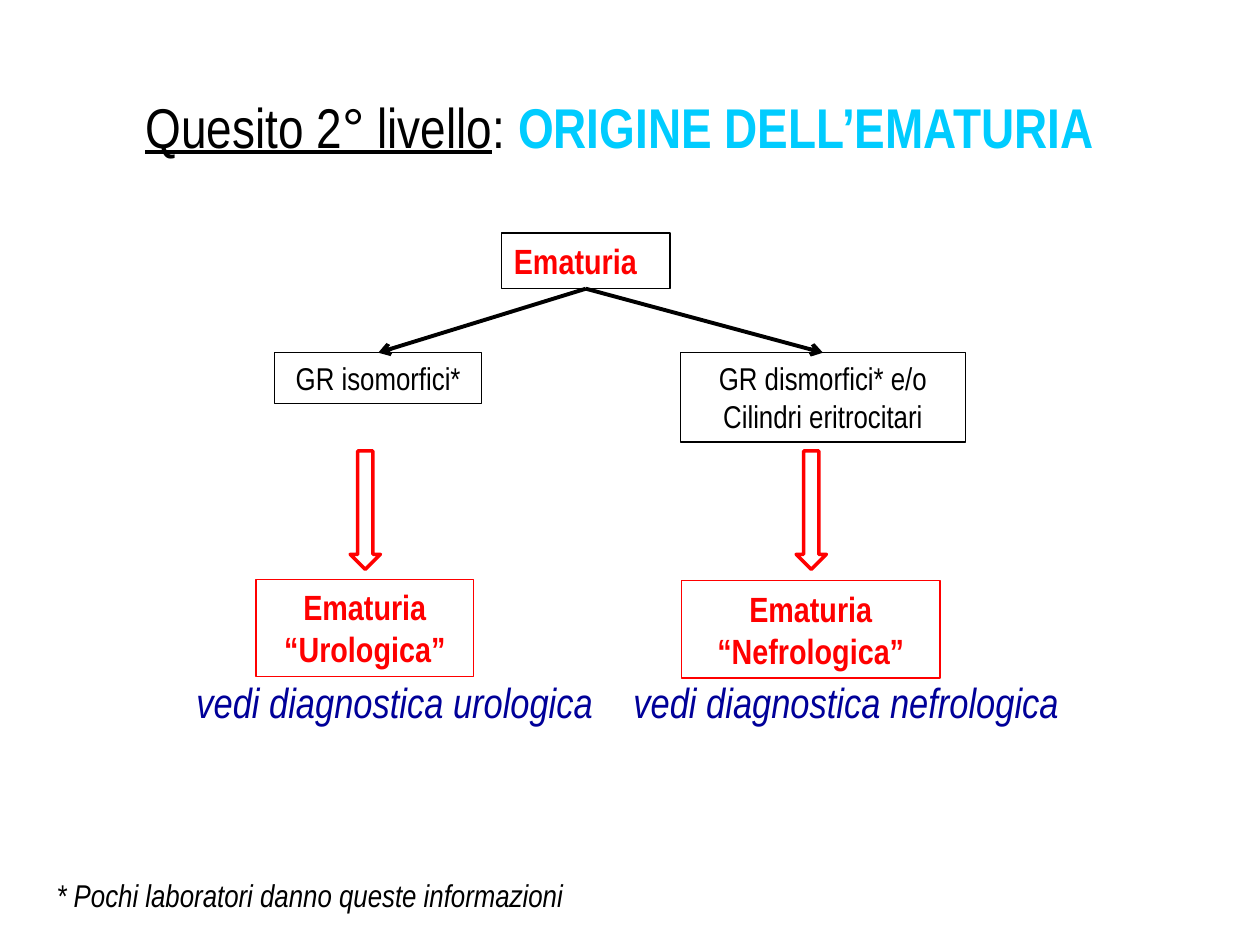
from dataclasses import dataclass
from lxml.etree import SubElement
from pptx import Presentation
from pptx.dml.color import RGBColor
from pptx.enum.shapes import MSO_CONNECTOR, MSO_SHAPE
from pptx.enum.text import MSO_ANCHOR, MSO_AUTO_SIZE, PP_ALIGN
from pptx.oxml.ns import qn
from pptx.util import Cm, Pt


@dataclass(frozen=True)
class Theme:
    font: str = "Arial Narrow"
    black: str = "000000"
    white: str = "FFFFFF"
    red: str = "FF0000"
    cyan: str = "00CCFF"
    navy: str = "000099"
    head: int = 32
    link: int = 24
    node: int = 20
    body: int = 18
    thin: float = 0.75
    thick: float = 2.25
    block: float = 2


class Board:
    def __init__(self, slide, theme):
        self.slide = slide
        self.theme = theme

    def label(self, shape, lines, size, align, wrap=True):
        frame = shape.text_frame
        frame.word_wrap = wrap
        frame.auto_size = MSO_AUTO_SIZE.SHAPE_TO_FIT_TEXT
        frame.vertical_anchor = MSO_ANCHOR.TOP
        for i, runs in enumerate(lines):
            para = frame.add_paragraph() if i else frame.paragraphs[0]
            para.alignment = align
            for text, color, style in runs:
                run = para.add_run()
                run.text = text
                font = run.font
                font.name = self.theme.font
                font.size = Pt(size)
                font.color.rgb = RGBColor.from_string(color)
                font.bold = "b" in style
                font.italic = "i" in style
                font.underline = "u" in style

    def title(self, x, y, w, h, runs):
        shape = self.slide.shapes.title
        shape.left, shape.top, shape.width, shape.height = map(Cm, (x, y, w, h))
        self.label(shape, [runs], self.theme.head, PP_ALIGN.CENTER)

    def shape(self, kind, x, y, w, h, line, width):
        shape = self.slide.shapes.add_shape(kind, *map(Cm, (x, y, w, h)))
        shape.shadow.inherit = False
        shape.fill.background()
        shape.line.color.rgb = RGBColor.from_string(line)
        shape.line.width = Pt(width)
        return shape

    def box(self, x, y, w, h, texts, size, color, line, style="", align=PP_ALIGN.CENTER):
        shape = self.shape(MSO_SHAPE.RECTANGLE, x, y, w, h, line, self.theme.thin)
        self.label(shape, [[(text, color, style)] for text in texts], size, align)
        return shape

    def arrow(self, x, y, w, h):
        shape = self.shape(MSO_SHAPE.DOWN_ARROW, x, y, w, h, self.theme.red, self.theme.block)
        shape.fill.solid()
        shape.fill.fore_color.rgb = RGBColor.from_string(self.theme.white)

    def join(self, top, low):
        link = self.slide.shapes.add_connector(MSO_CONNECTOR.STRAIGHT, 0, 0, 0, 0)
        link.begin_connect(top, 2)
        link.end_connect(low, 0)
        link.line.color.rgb = RGBColor.from_string(self.theme.black)
        link.line.width = Pt(self.theme.thick)
        props = link._element.spPr
        SubElement(props.find(qn("a:ln")), qn("a:tailEnd"), type="arrow")
        SubElement(props, qn("a:effectLst"))

    def note(self, x, y, w, h, text, size, color):
        shape = self.slide.shapes.add_textbox(*map(Cm, (x, y, w, h)))
        self.label(shape, [[(text, color, "i")]], size, PP_ALIGN.LEFT, False)


def main():
    deck = Presentation()
    deck.slide_width, deck.slide_height = Cm(25.4), Cm(19.05)
    theme = Theme()
    board = Board(deck.slides.add_slide(deck.slide_layouts[5]), theme)

    board.title(0.89, 1.73, 23.44, 1.63, [
        ("Quesito 2° livello", theme.black, "u"),
        (": ", theme.black, ""),
        ("ORIGINE DELL’EMATURIA ", theme.cyan, "b"),
    ])

    root = board.box(10.11, 4.7, 3.4, 1.12, ["Ematuria"], theme.node,
                     theme.red, theme.black, "b", PP_ALIGN.LEFT)
    for x, w, h, text in (
        (5.54, 4.17, 1.02, "GR isomorfici*"),
        (13.72, 5.74, 1.8, "GR dismorfici* e/o Cilindri eritrocitari"),
    ):
        cell = board.box(x, 7.11, w, h, [text], theme.body, theme.black, theme.black)
        board.join(root, cell)

    for x, y, w, kind in (
        (5.16, 11.68, 4.39, "“Urologica”"),
        (13.74, 11.71, 5.21, "“Nefrologica”"),
    ):
        board.box(x, y, w, 1.96, ["Ematuria", kind], theme.node,
                  theme.red, theme.red, "b")

    for x in (7.06, 16.05):
        board.arrow(x, 9.09, 0.61, 2.39)

    for x, w, kind in ((3.71, 8.74, "urologica"), (12.52, 9.32, "nefrologica")):
        board.note(x, 13.51, w, 1.27, "vedi diagnostica " + kind, theme.link, theme.navy)
    board.note(0.89, 17.53, 10.95, 1.02,
               "* Pochi laboratori danno queste informazioni", theme.body, theme.black)

    deck.save("out.pptx")


if __name__ == "__main__":
    main()
